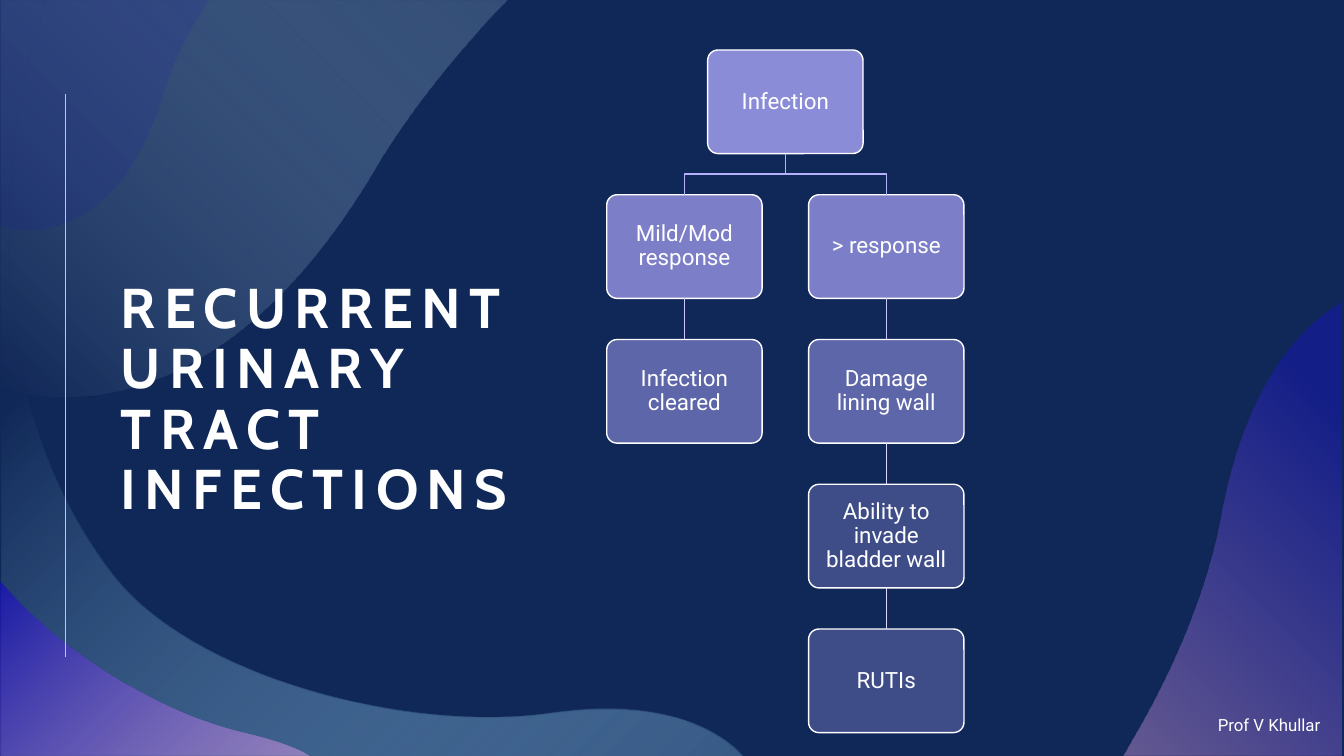
from lxml.etree import SubElement
from pptx import Presentation
from pptx.dml.color import RGBColor
from pptx.enum.shapes import MSO_CONNECTOR as CONN, MSO_SHAPE as SHAPE
from pptx.enum.text import MSO_ANCHOR as ANCHOR, PP_ALIGN as ALIGN
from pptx.oxml import parse_xml
from pptx.oxml.ns import nsdecls, qn
from pptx.util import Pt

NAVY = RGBColor(0x10, 0x28, 0x57)
WHITE = RGBColor(0xFF, 0xFF, 0xFF)
SKY = RGBColor(0x92, 0xCD, 0xF0)
PALE_SKY = RGBColor(0xBE, 0xE1, 0xF6)
BLUE = RGBColor(0x18, 0x0D, 0xC2)
BRIGHT_BLUE = RGBColor(0x1C, 0x0F, 0xE1)
PINK = RGBColor(0xF6, 0xA6, 0xF4)
PALE_PINK = RGBColor(0xF7, 0xAF, 0xF5)
LILAC = RGBColor(0xAA, 0xA5, 0xF9)
LINK_1 = RGBColor(0xB5, 0xB1, 0xFA)
LINK_2 = RGBColor(0xC9, 0xC6, 0xFB)
LINK_3 = RGBColor(0xDA, 0xD8, 0xFC)

CARD_W, CARD_H = 111, 74
CHART_X, CHART_Y = 433.4, 35.7
COLUMN_STEP, ROW_STEP = 144.2, 103.4

BOTTOM_RIGHT = '<a:path path="circle"><a:fillToRect l="100000" t="100000"/></a:path>'
BOTTOM_LEFT = '<a:path path="circle"><a:fillToRect t="100000" r="100000"/></a:path>'
DIAGONAL = '<a:lin ang="18900000" scaled="0"/>'

TOP_WAVES = [
    ([(1.2, 0), (33, 0), (32.5, 1.4), (29.5, 14.4, 26, 27.4, 21, 41.8),
      (-15.8, 212.4, 23, 334.8, 80, 409), (136, 483.8, 293, 524.2, 394.6, 509),
      (456.5, 500.4, 499, 512, 525, 534.2), (530.6, 540), (1.2, 540)],
     [(0, SKY, 30), (73, NAVY, 100)], BOTTOM_RIGHT),
    ([(0.7, 0.7), (362, 0.7), (351.4, 11.5), (319, 46.8, 290, 83.5, 268.6, 119.5),
      (189.4, 254.2, 96.5, 294.5, 16.6, 280.8), (0.7, 276.5)],
     [(0, NAVY, 56), (99, PALE_SKY, 20)], DIAGONAL),
]
CORNER_WAVE = [(0, 0), (149, 0), (144.7, 7.2), (131.8, 27.4, 121.7, 49.7, 116, 69.8),
               (92.2, 145.4, 48.2, 170, 7.2, 163.4), (0, 161.3), (0, 0)]
BOTTOM_WAVES = [
    ([(0, 414.7), (8, 423.4), (51, 470.9, 118.8, 510.5, 174.2, 523.4),
      (190, 527, 204.5, 531.4, 216, 537), (221, 540), (0, 540)],
     [(0, PINK, 45), (98, BLUE, 67)], BOTTOM_RIGHT),
    ([(958.3, 215.3), (958.3, 540), (802.8, 540), (811.4, 524.9),
      (841.7, 472.3, 864, 416.2, 872.6, 366.5),
      (886.3, 294.5, 913, 249, 946.8, 223.2), (958.3, 215.3)],
     [(0, PALE_PINK, 36), (83, BRIGHT_BLUE, 35)], BOTTOM_LEFT),
]


def add_outline(s, points, close):
    points = [(Pt(x), Pt(y)) for x, y in points]
    builder = s.shapes.build_freeform(*points[0])
    builder.add_line_segments(points[1:], close=close)
    sp = builder.convert_to_shape()
    sp.shadow.inherit = False
    return sp


def add_wave(s, segments):
    sp = add_outline(s, [segment[-2:] for segment in segments], True)
    sp.line.fill.background()
    outline = next(sp.element.iter(qn("a:path")))
    for segment, line_to in zip(segments, list(outline)):
        if len(segment) == 6:
            curve = parse_xml(f'<a:cubicBezTo {nsdecls("a")}/>')
            for x, y in zip(segment[::2], segment[1::2]):
                pt = SubElement(curve, qn("a:pt"))
                pt.set("x", str(Pt(x) - sp.left))
                pt.set("y", str(Pt(y) - sp.top))
            outline.replace(line_to, curve)
    return sp


def add_gradient_wave(s, segments, stops, direction):
    sp = add_wave(s, segments)
    stop_xml = "".join(
        f'<a:gs pos="{pos * 1000}"><a:srgbClr val="{color}">'
        f'<a:alpha val="{alpha * 1000}"/></a:srgbClr></a:gs>'
        for pos, color, alpha in stops)
    gradient = parse_xml(f'<a:gradFill {nsdecls("a")} rotWithShape="1">'
                         f'<a:gsLst>{stop_xml}</a:gsLst>{direction}</a:gradFill>')
    sp.element.spPr.find(qn("a:custGeom")).addnext(gradient)


def fill_clear(sp, color, opacity):
    sp.fill.solid()
    sp.fill.fore_color.rgb = color
    value = sp.element.spPr.find(qn("a:solidFill")).find(qn("a:srgbClr"))
    SubElement(value, qn("a:alpha")).set("val", str(opacity * 1000))


def add_line(s, color, width, x1=0, y1=0, x2=0, y2=0):
    line = s.shapes.add_connector(CONN.STRAIGHT, Pt(x1), Pt(y1), Pt(x2), Pt(y2))
    line.line.color.rgb = color
    line.line.width = Pt(width)
    SubElement(line.element.spPr, qn("a:effectLst"))
    return line


def add_link(s, upper, lower, color):
    line = add_line(s, color, 1)
    line.begin_connect(upper, 2)
    line.end_connect(lower, 0)


def add_branch(s, upper, lower, color):
    x1, x2 = [(sp.left + sp.width / 2) / Pt(1) for sp in (upper, lower)]
    y1, y2 = (upper.top + upper.height) / Pt(1), lower.top / Pt(1)
    middle = (y1 + y2) / 2
    sp = add_outline(s, [(x1, y1), (x1, middle), (x2, middle), (x2, y2)], False)
    sp.fill.background()
    sp.line.color.rgb = color
    sp.line.width = Pt(1)


def write(sp, text, size, font, align, anchor, spacing=1.0):
    tf = sp.text_frame
    tf.word_wrap = True
    tf.vertical_anchor = anchor
    p = tf.paragraphs[0]
    p.alignment = align
    p.line_spacing = spacing
    r = p.add_run()
    r.text = text
    r.font.size = Pt(size)
    r.font.name = font
    r.font.color.rgb = WHITE
    return r


def add_text(s, box, *style):
    return write(s.shapes.add_textbox(*map(Pt, box)), *style)


def add_card(s, text, column, row, opacity):
    sp = s.shapes.add_shape(SHAPE.ROUNDED_RECTANGLE,
                            Pt(CHART_X + column * COLUMN_STEP),
                            Pt(CHART_Y + row * ROW_STEP), Pt(CARD_W), Pt(CARD_H))
    sp.adjustments[0] = 0.1
    sp.shadow.inherit = False
    fill_clear(sp, LILAC, opacity)
    sp.line.color.rgb = WHITE
    sp.line.width = Pt(1)
    tf = sp.text_frame
    tf.margin_left = tf.margin_right = tf.margin_top = tf.margin_bottom = Pt(5)
    write(sp, text, 16, "Roboto", ALIGN.CENTER, ANCHOR.MIDDLE, 0.9)
    return sp


def add_flow(s):
    infection = add_card(s, "Infection", 0.5, 0, 80)
    mild = add_card(s, "Mild/Mod response", 0, 1, 70)
    cleared = add_card(s, "Infection cleared", 0, 2, 50)
    strong = add_card(s, "> response", 1, 1, 70)
    damage = add_card(s, "Damage lining wall", 1, 2, 50)
    invade = add_card(s, "Ability to invade bladder wall", 1, 3, 30)
    rutis = add_card(s, "RUTIs", 1, 4, 30)
    for response in (mild, strong):
        add_branch(s, infection, response, LINK_1)
    add_link(s, mild, cleared, LINK_2)
    add_link(s, strong, damage, LINK_2)
    add_link(s, damage, invade, LINK_3)
    add_link(s, invade, rutis, LINK_3)


def main():
    prs = Presentation()
    prs.slide_width, prs.slide_height = Pt(960), Pt(540)
    s = prs.slides.add_slide(prs.slide_layouts[6])
    s.background.fill.solid()
    s.background.fill.fore_color.rgb = NAVY
    for wave in TOP_WAVES:
        add_gradient_wave(s, *wave)
    fill_clear(add_wave(s, CORNER_WAVE), BLUE, 11)
    for wave in BOTTOM_WAVES:
        add_gradient_wave(s, *wave)
    add_line(s, PINK, 0.5, 46.8, 67, 46.8, 469.4)
    add_flow(s)
    r = add_text(s, (79.2, 182.7, 360, 193.7), "RECURRENT URINARY TRACT INFECTIONS",
                 40, "Cabin", ALIGN.LEFT, ANCHOR.BOTTOM, 0.9)
    r.font.bold = True
    r._r.get_or_add_rPr().set("spc", "600")
    add_text(s, (177, 507.2, 773.3, 21.8), "Prof V Khullar",
             12, "Roboto", ALIGN.RIGHT, ANCHOR.TOP)
    prs.save("out.pptx")


if __name__ == "__main__":
    main()
